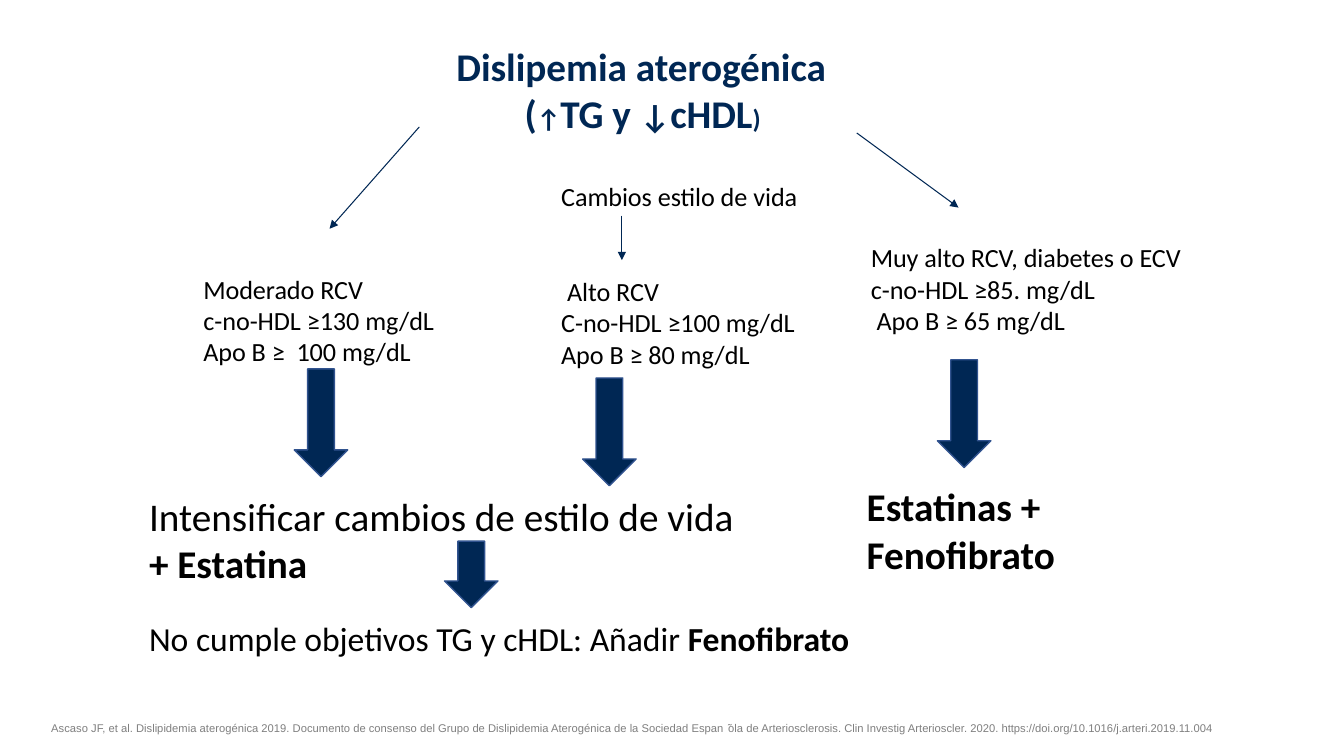
from dataclasses import dataclass
from typing import Any, Optional

import lxml.etree
import pptx
import pptx.dml.color
import pptx.enum.shapes
import pptx.enum.text
import pptx.oxml.ns
import pptx.util


@dataclass(frozen=True)
class Theme:
    navy: str = "002754"
    arrow_edge: str = "31538F"
    black: str = "000000"
    grey: str = "7F7F7F"
    body_font: str = "Calibri"
    citation_font: str = "Arial"
    heading: float = 28
    subheading: float = 24
    body: float = 18.67
    citation: float = 8
    arrow_line: float = 1
    connector_line: float = 0.75


THEME = Theme()


@dataclass(frozen=True)
class Span:
    text: str
    size: float = THEME.body
    bold: bool = False


@dataclass(frozen=True)
class Para:
    spans: tuple[Span, ...]
    space_before: Optional[float] = None


@dataclass(frozen=True)
class TextBlock:
    left: float
    top: float
    width: float
    height: float
    paras: tuple[Para, ...]
    color: str = THEME.black
    font: str = THEME.body_font
    centred: bool = False
    grows: bool = False


@dataclass(frozen=True)
class DownArrow:
    left: float
    top: float
    height: float = 77
    width: float = 38.2


@dataclass(frozen=True)
class Branch:
    start_x: float
    start_y: float
    end_x: float
    end_y: float


def line(text: str, size: float = THEME.body, bold: bool = False,
         space_before: Optional[float] = None) -> Para:
    return Para((Span(text, size, bold),), space_before)


TEXT_BLOCKS = (
    TextBlock(281.5, 26.6, 359.3, 74.9, (
        line("Dislipemia aterogénica ", THEME.heading, True),
        Para((
            Span("(", THEME.heading, True),
            Span("↑", THEME.body, True),
            Span("TG y ", THEME.heading, True),
            Span("↓", THEME.subheading, True),
            Span("cHDL", THEME.heading, True),
            Span(") ", THEME.body, True),
        )),
    ), color=THEME.navy, centred=True),
    TextBlock(138.2, 191.5, 584, 72, (
        line("Moderado RCV"),
        line("c-no-HDL ≥130 mg/dL"),
        line("Apo B ≥  100 mg/dL"),
    )),
    TextBlock(393.8, 125.3, 247, 139.7, (
        line("Cambios estilo de vida"),
        line(" Alto RCV", space_before=45.6),
        line("C-no-HDL ≥100 mg/dL"),
        line("Apo B ≥ 80 mg/dL"),
    )),
    TextBlock(614.9, 169.2, 252.7, 84.2, (
        line("Muy alto RCV, diabetes o ECV"),
        line("c-no-HDL ≥85. mg/dL"),
        line(" Apo B ≥ 65 mg/dL"),
    )),
    TextBlock(99.4, 347.8, 540, 191.5, (
        line("Intensificar cambios de estilo de vida", THEME.heading),
        line("+ Estatina", THEME.heading, True),
        Para((
            Span("No cumple objetivos TG y cHDL: Añadir ", THEME.subheading),
            Span("Fenofibrato", THEME.subheading, True),
        ), space_before=22.8),
    )),
    TextBlock(612, 341.3, 190.8, 74.9, (
        line("Estatinas + Fenofibrato", THEME.heading, True),
    )),
    TextBlock(29.5, 511.9, 915.8, 17.3, (
        line(
            "Ascaso JF, et al. Dislipidemia aterogénica 2019. Documento de consenso "
            "del Grupo de Dislipidemia Aterogénica de la Sociedad Espan ̃ola de "
            "Arteriosclerosis. Clin Investig Arterioscler. 2020. "
            "https://doi.org/10.1016/j.arteri.2019.11.004",
            THEME.citation,
        ),
    ), color=THEME.grey, font=THEME.citation_font, grows=True),
)

DOWN_ARROWS = (
    DownArrow(210.2, 263.5),
    DownArrow(669.6, 257),
    DownArrow(317.5, 386.6, 47.5),
    DownArrow(416.2, 270),
)

BRANCHES = (
    Branch(612, 95, 684.7, 148.3),
    Branch(299.5, 90.7, 235.4, 163.4),
    Branch(444.2, 154.1, 444.2, 185.8),
)


def points(*lengths: float) -> list[pptx.util.Length]:
    return [pptx.util.Pt(length) for length in lengths]


def rgb(color: str) -> pptx.dml.color.RGBColor:
    return pptx.dml.color.RGBColor.from_string(color)


def apply_format(target: Any, values: dict[str, Any]) -> None:
    for name, value in values.items():
        setattr(target, name, value)


def draw_text(page: Any, block: TextBlock) -> None:
    box = page.shapes.add_textbox(
        *points(block.left, block.top, block.width, block.height))
    frame = box.text_frame
    sizing = pptx.enum.text.MSO_AUTO_SIZE
    apply_format(frame, {
        "word_wrap": True,
        "auto_size": sizing.SHAPE_TO_FIT_TEXT if block.grows else sizing.NONE,
    })
    alignment = pptx.enum.text.PP_ALIGN
    for index, para in enumerate(block.paras):
        paragraph = frame.add_paragraph() if index else frame.paragraphs[0]
        paragraph.alignment = alignment.CENTER if block.centred else alignment.LEFT
        if para.space_before is not None:
            paragraph.space_before = pptx.util.Pt(para.space_before)
        for span in para.spans:
            run = paragraph.add_run()
            run.text = span.text
            apply_format(run.font, {
                "name": block.font,
                "size": pptx.util.Pt(span.size),
                "bold": span.bold,
            })
            run.font.color.rgb = rgb(block.color)


def draw_arrow(page: Any, arrow: DownArrow) -> None:
    shape = page.shapes.add_shape(
        pptx.enum.shapes.MSO_SHAPE.DOWN_ARROW,
        *points(arrow.left, arrow.top, arrow.width, arrow.height))
    shape.shadow.inherit = False
    shape.fill.solid()
    shape.fill.fore_color.rgb = rgb(THEME.navy)
    shape.line.color.rgb = rgb(THEME.arrow_edge)
    shape.line.width = pptx.util.Pt(THEME.arrow_line)


def draw_branch(page: Any, branch: Branch) -> None:
    connector = page.shapes.add_connector(
        pptx.enum.shapes.MSO_CONNECTOR.STRAIGHT,
        *points(branch.start_x, branch.start_y, branch.end_x, branch.end_y))
    connector.line.color.rgb = rgb(THEME.navy)
    connector.line.width = pptx.util.Pt(THEME.connector_line)
    qn = pptx.oxml.ns.qn
    lxml.etree.SubElement(
        connector.line.get_or_change_to_ln() if hasattr(connector.line, "get_or_change_to_ln")
        else connector.get_or_add_ln(), qn("a:tailEnd"), type="triangle")
    lxml.etree.SubElement(connector.element.spPr, qn("a:effectLst"))


def main() -> None:
    deck = pptx.Presentation()
    apply_format(deck, {
        "slide_width": pptx.util.Pt(960),
        "slide_height": pptx.util.Pt(540),
    })
    page = deck.slides.add_slide(deck.slide_layouts[6])
    for block in TEXT_BLOCKS:
        draw_text(page, block)
    for arrow in DOWN_ARROWS:
        draw_arrow(page, arrow)
    for branch in BRANCHES:
        draw_branch(page, branch)
    deck.save("out.pptx")


if __name__ == "__main__":
    main()
